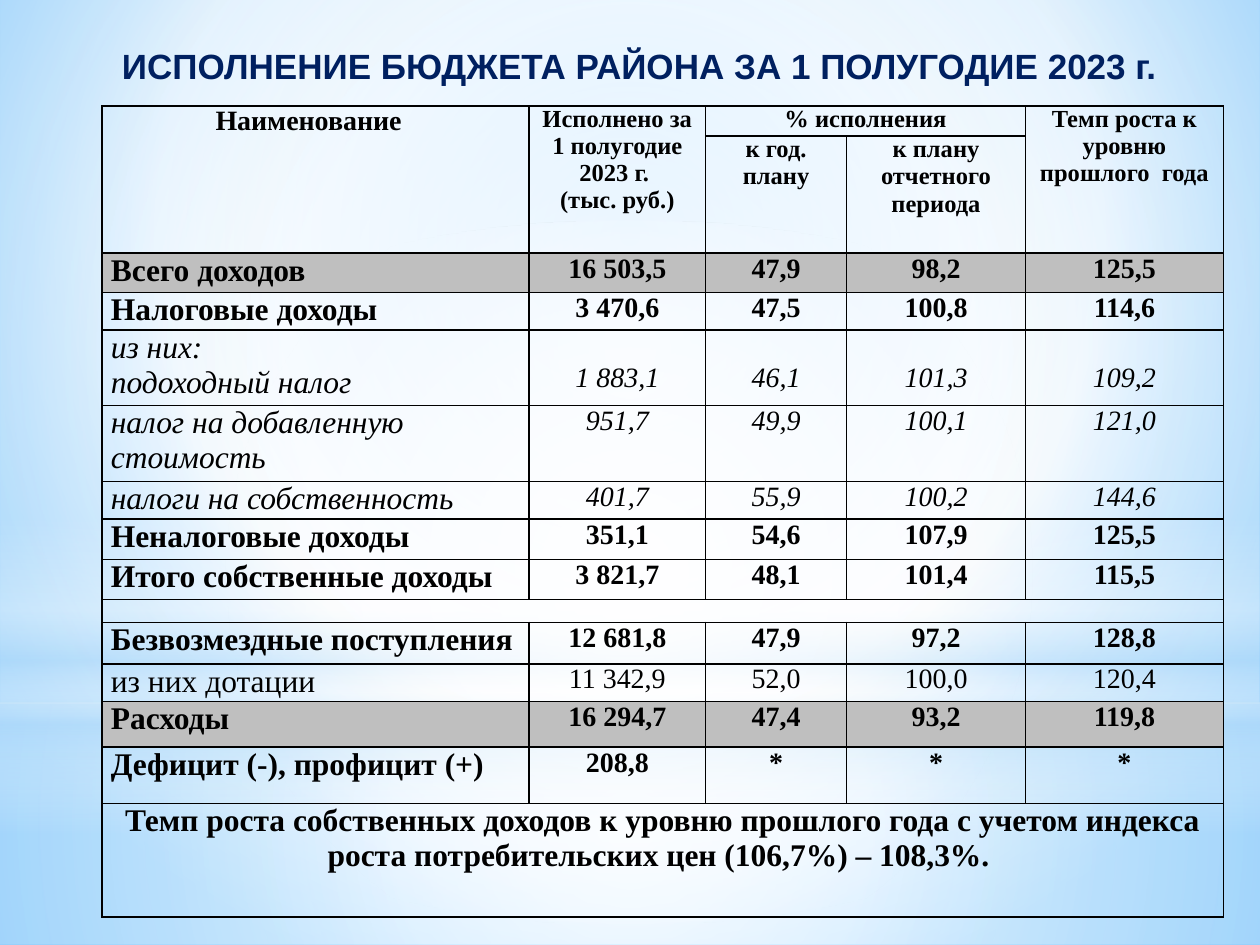
from lxml import etree
from pptx import Presentation
from pptx.dml.color import RGBColor
from pptx.enum.shapes import MSO_SHAPE
from pptx.enum.text import MSO_ANCHOR, PP_ALIGN
from pptx.oxml.ns import qn
from pptx.util import Inches, Pt

TITLE = "ИСПОЛНЕНИЕ БЮДЖЕТА РАЙОНА ЗА 1 ПОЛУГОДИЕ 2023 г."
# row, column, last row, last column, size, text
HEADERS = [
    (0, 0, 1, 0, 16, "Наименование  "),
    (0, 1, 1, 1, 14, "Исполнено за 1 полугодие 2023 г. \n(тыс. руб.)"),
    (0, 2, 0, 3, 14, "% исполнения"),
    (0, 4, 1, 4, 14, "Темп роста к уровню прошлого  года"),
    (1, 2, 1, 2, 14, "к год. плану"),
    (1, 3, 1, 3, 14, "к плану отчетного периода"),
]
# height, style, label and values
ROWS = [
    (0.31, "total", "Всего доходов", "16 503,5", "47,9", "98,2", "125,5"),
    (0.3, "bold", "Налоговые доходы", "3 470,6", "47,5", "100,8", "114,6"),
    (0.6, "italic", "из них:\nподоходный налог", "1 883,1", "46,1", "101,3", "109,2"),
    (0.6, "italic", "налог на добавленную стоимость", "951,7", "49,9", "100,1", "121,0"),
    (0.3, "italic", "налоги на собственность", "401,7", "55,9", "100,2", "144,6"),
    (0.32, "bold", "Неналоговые доходы", "351,1", "54,6", "107,9", "125,5"),
    (0.32, "bold", "Итого собственные доходы", "3 821,7", "48,1", "101,4", "115,5"),
    (0.18, "gap"),
    (0.33, "bold", "Безвозмездные поступления", "12 681,8", "47,9", "97,2", "128,8"),
    (0.3, "plain", "из них дотации", "11 342,9", "52,0", "100,0", "120,4"),
    (0.36, "total", "Расходы", "16 294,7", "47,4", "93,2", "119,8"),
    (0.45, "bold", "Дефицит (-), профицит (+)", "208,8", "*", "*", "*"),
    (0.9, "note", "Темп роста собственных доходов к уровню прошлого года с учетом "
                  "индекса роста потребительских цен (106,7%) – 108,3%. "),
]
HEADER_HEIGHTS = [0.24, 0.93]
COLUMN_WIDTHS = [3.39, 1.4, 1.12, 1.42, 1.57]
LINE_16PT = 0.26

# stops are position, colour, opacity; focus is left, top, right, bottom
BACKGROUND = [(0, "9ED5FF", 100), (60, "FFFFFF", 100), (100, "5BB9FF", 100)]
CENTRE = (50, 50, 50, 50)
GLOWS = [
    (MSO_SHAPE.RECTANGLE, 5.58, 1.92, CENTRE,
     [(0, "FFFFFF", 91), (37, "FFFFFF", 76), (100, "B4DCFA", 79)]),
    (MSO_SHAPE.RECTANGLE, 0, 5.58, CENTRE,
     [(0, "FFFFFF", 89), (48, "FFFFFF", 62), (100, "B4DCFA", 79)]),
    (MSO_SHAPE.RECTANGLE, 4.12, 2.5, None,
     [(0, "FFFFFF", 0), (29, "FFFFFF", 30), (45, "B4DCFA", 40),
      (55, "FFFFFF", 26), (65, "B4DCFA", 60), (100, "FFFFFF", 0)]),
    (MSO_SHAPE.OVAL, 1.75, 5.58, CENTRE, [(0, "FFFFFF", 100), (56, "FFFFFF", 0)]),
]


def colour(code):
    return RGBColor.from_string(code)


def add(parent, tag, **attributes):
    return etree.SubElement(parent, qn(tag), {k: str(v) for k, v in attributes.items()})


def set_gradient(fill, holder, stops, focus):
    """Fill with a gradient: circular around focus, or downwards without one."""
    fill.gradient()
    grad = holder.find(qn("a:gradFill"))
    for child in list(grad):
        grad.remove(child)
    stop_list = add(grad, "a:gsLst")
    for position, code, opacity in stops:
        stop = add(stop_list, "a:gs", pos=position * 1000)
        tint = add(stop, "a:srgbClr", val=code)
        if opacity < 100:
            add(tint, "a:alpha", val=opacity * 1000)
    if focus is None:
        add(grad, "a:lin", ang=90 * 60000, scaled=0)
    else:
        circle = add(grad, "a:path", path="circle")
        add(circle, "a:fillToRect", **{side: n * 1000 for side, n in zip("ltrb", focus)})


def set_font(font, name, size, code, bold=True, italic=False):
    font.name, font.size, font.bold, font.italic = name, Pt(size), bold, italic
    font.color.rgb = colour(code)


def write(cell, text, size, align=PP_ALIGN.CENTER, bold=True, italic=False):
    cell.text = text
    for para in cell.text_frame.paragraphs:
        para.alignment = align
        set_font(para.font, "Times New Roman", size, "000000", bold, italic)


def format_cell(cell, shade):
    cell.margin_left = cell.margin_right = Inches(0.07)
    cell.margin_top = cell.margin_bottom = 0
    properties = cell._tc.get_or_add_tcPr()
    for side in ("a:lnL", "a:lnR", "a:lnT", "a:lnB"):
        line = add(properties, side, w=Pt(1))
        add(add(line, "a:solidFill"), "a:srgbClr", val="000000")
    if shade:
        cell.fill.solid()
        cell.fill.fore_color.rgb = colour("BFBFBF")
    else:
        cell.fill.background()


def add_backdrop(page):
    fill = page.background.fill
    fill.solid()
    holder = page._element.cSld.find(qn("p:bg")).find(qn("p:bgPr"))
    set_gradient(fill, holder, BACKGROUND, (20, 10, 20, 60))
    for kind, top, height, focus, stops in GLOWS:
        glow = page.shapes.add_shape(kind, 0, Inches(top), Inches(10), Inches(height))
        glow.shadow.inherit = False
        glow.line.fill.background()
        set_gradient(glow.fill, glow._element.spPr, stops, focus)


def add_title(page):
    title = page.shapes.title
    page.shapes._spTree.append(title._element)  # in front of the backdrop
    title.left, title.top = Inches(0.43), Inches(0.3)
    title.width, title.height = Inches(9.29), Inches(0.44)
    title.text_frame.text = TITLE
    title.text_frame.vertical_anchor = MSO_ANCHOR.MIDDLE
    para = title.text_frame.paragraphs[0]
    para.alignment = PP_ALIGN.CENTER
    set_font(para.font, "Arial", 20, "002060")


def add_budget_table(page):
    heights = HEADER_HEIGHTS + [row[0] for row in ROWS]
    table = page.shapes.add_table(
        len(heights), len(COLUMN_WIDTHS), Inches(0.81), Inches(0.84),
        Inches(sum(COLUMN_WIDTHS)), Inches(sum(heights))).table
    table.first_row = table.horz_banding = False
    for column, width in zip(table.columns, COLUMN_WIDTHS):
        column.width = Inches(width)
    styles = ["header"] * len(HEADER_HEIGHTS) + [row[1] for row in ROWS]
    for row, height, style in zip(table.rows, heights, styles):
        row.height = Inches(height)
        for cell in row.cells:
            format_cell(cell, style == "total")

    for top, left, bottom, right, size, text in HEADERS:
        cell = table.cell(top, left)
        if (top, left) != (bottom, right):
            cell.merge(table.cell(bottom, right))
        write(cell, text, size)

    last = len(COLUMN_WIDTHS) - 1
    for r, (_, style, *texts) in enumerate(ROWS, len(HEADER_HEIGHTS)):
        label = table.cell(r, 0)
        if style in ("gap", "note"):
            label.merge(table.cell(r, last))
        if style == "gap":
            for cell in table.rows[r].cells:
                end = cell.text_frame.paragraphs[0]._p.get_or_add_endParaRPr()
                end.set("sz", "800")
            continue
        bold, italic = style not in ("italic", "plain"), style == "italic"
        align = PP_ALIGN.CENTER if style == "note" else PP_ALIGN.LEFT
        write(label, texts[0], 18, align, bold, italic)
        for c, value in enumerate(texts[1:], 1):
            cell = table.cell(r, c)
            write(cell, value, 16, bold=bold, italic=italic)
            if "\n" in texts[0]:  # values stand beside the second line
                cell.margin_top = Inches(LINE_16PT)


def main():
    deck = Presentation()
    deck.slide_width, deck.slide_height = Inches(10), Inches(7.5)
    page = deck.slides.add_slide(deck.slide_layouts[5])
    add_backdrop(page)
    add_title(page)
    add_budget_table(page)
    deck.save("out.pptx")


if __name__ == "__main__":
    main()
